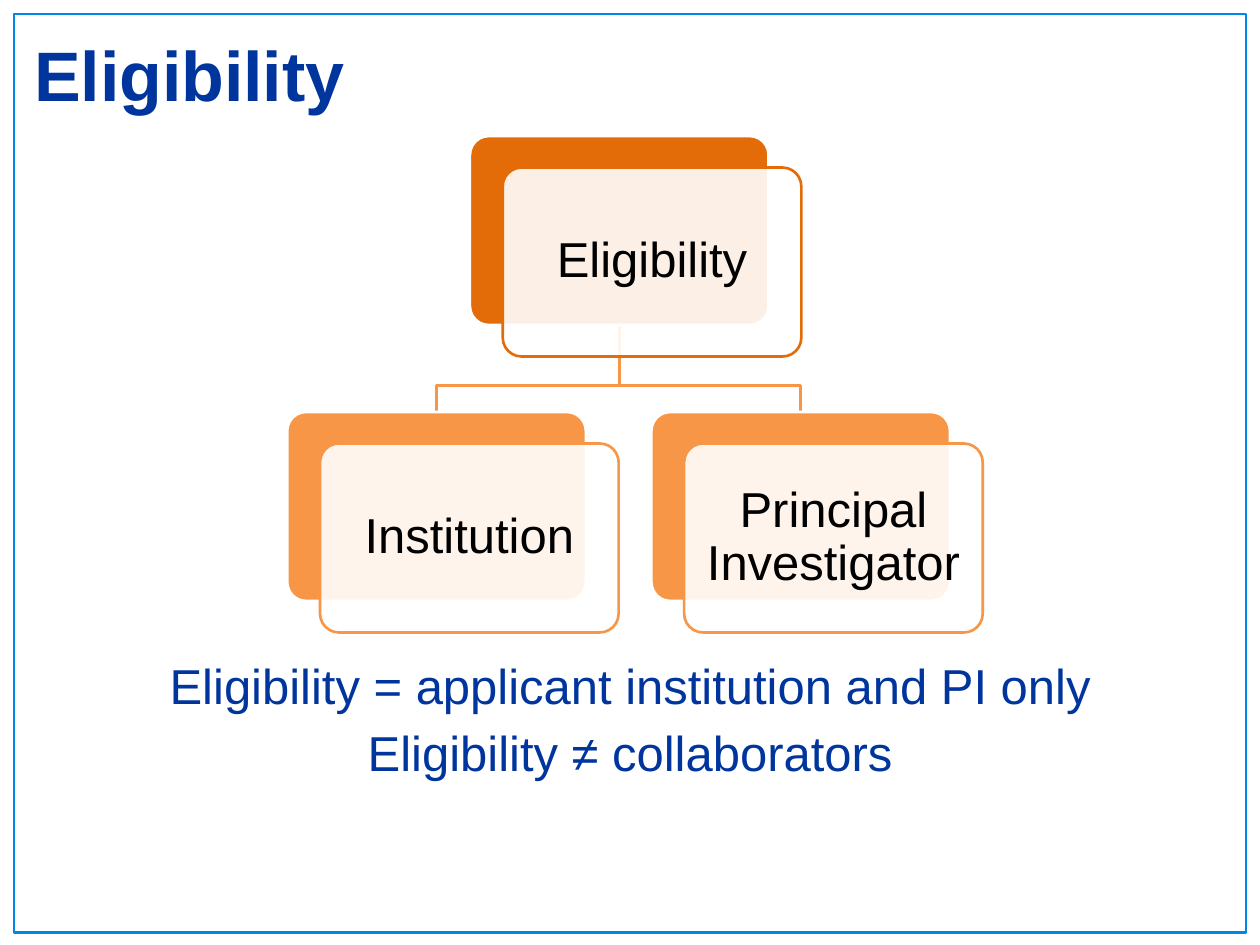
from lxml import etree
from pptx import Presentation
from pptx.dml.color import RGBColor
from pptx.enum import shapes, text
from pptx.oxml.ns import qn
from pptx.util import Inches, Pt

NAVY, DARK, LIGHT = "00359E", "E36C09", "F79646"
WIDE, HIGH = 2.37, 1.5
RIGHT, DOWN = 0.26, 0.25


def paint(color, code):
    color.rgb = RGBColor.from_string(code)


def write(para, words, size, code, bold=False):
    run = para.add_run()
    run.text = words
    run.font.name = "Arial"
    run.font.size = Pt(size)
    run.font.bold = bold
    paint(run.font.color, code)


deck = Presentation()
deck.slide_width, deck.slide_height = Inches(10), Inches(7.5)
slide = deck.slides.add_slide(deck.slide_layouts[1])
title, body = slide.placeholders

# Title
title.left, title.top = Inches(0.17), Inches(0)
title.width, title.height = Inches(9.67), Inches(1.17)
frame = title.text_frame
frame.auto_size = text.MSO_AUTO_SIZE.NONE
frame.vertical_anchor = text.MSO_ANCHOR.MIDDLE
frame.paragraphs[0].alignment = text.PP_ALIGN.LEFT
write(frame.paragraphs[0], "Eligibility", 40, NAVY, True)

# Summary under the diagram
body.left, body.top = Inches(0.5), Inches(5.15)
body.width, body.height = Inches(9), Inches(1.4)
frame = body.text_frame
frame.auto_size = text.MSO_AUTO_SIZE.NONE
lines = ["Eligibility = applicant institution and PI only",
         "Eligibility ≠ collaborators"]
for i, words in enumerate(lines):
    para = frame.add_paragraph() if i else frame.paragraphs[0]
    props = para._p.get_or_add_pPr()
    props.set("marL", "0")
    props.set("indent", "0")
    etree.SubElement(props, qn("a:buNone"))
    para.alignment = text.PP_ALIGN.CENTER
    para.space_before = Pt(5 if i else 0)
    write(para, words, 28, NAVY)

# Border around the slide
border = slide.shapes.add_shape(shapes.MSO_SHAPE.RECTANGLE, Inches(0.11),
                                Inches(0.11), Inches(9.78), Inches(7.29))
border.shadow.inherit = False
border.fill.background()
paint(border.line.color, "0087E6")
border.line.width = Pt(1.5)

# Branches from the root card to its two children
cards = [("Eligibility", 3.73, 1.08, DARK),
         ("Institution", 2.28, 3.27, LIGHT),
         ("Principal Investigator", 5.17, 3.27, LIGHT)]
root = cards[0]
start, base, bend = root[1] + WIDE / 2, root[2] + HIGH, 3.06
for name, left, top, code in cards[1:]:
    end = left + WIDE / 2
    path = slide.shapes.build_freeform(Inches(start), Inches(base))
    path.add_line_segments([(Inches(x), Inches(y)) for x, y in
                            [(start, bend), (end, bend), (end, top)]],
                           close=False)
    branch = path.convert_to_shape()
    branch.shadow.inherit = False
    branch.fill.background()
    paint(branch.line.color, code)
    branch.line.width = Pt(1.5)

# Cards: a solid back and a nearly opaque white front
for name, left, top, code in cards:
    for dx, dy, fill, edge in [(0, 0, code, "FFFFFF"),
                               (RIGHT, DOWN, "FFFFFF", code)]:
        card = slide.shapes.add_shape(
            shapes.MSO_SHAPE.ROUNDED_RECTANGLE, Inches(left + dx),
            Inches(top + dy), Inches(WIDE), Inches(HIGH))
        card.adjustments[0] = 0.1
        card.shadow.inherit = False
        card.fill.solid()
        paint(card.fill.fore_color, fill)
        paint(card.line.color, edge)
        card.line.width = Pt(1.5)
    tint = card._element.spPr.find(qn("a:solidFill")).find(qn("a:srgbClr"))
    etree.SubElement(tint, qn("a:alpha")).set("val", "90000")
    frame = card.text_frame
    frame.word_wrap = True
    frame.vertical_anchor = text.MSO_ANCHOR.MIDDLE
    frame.margin_left = frame.margin_right = Inches(0.05)
    para = frame.paragraphs[0]
    para.alignment = text.PP_ALIGN.CENTER
    para.line_spacing = 0.9
    write(para, name, 28, "000000")

deck.save("out.pptx")
